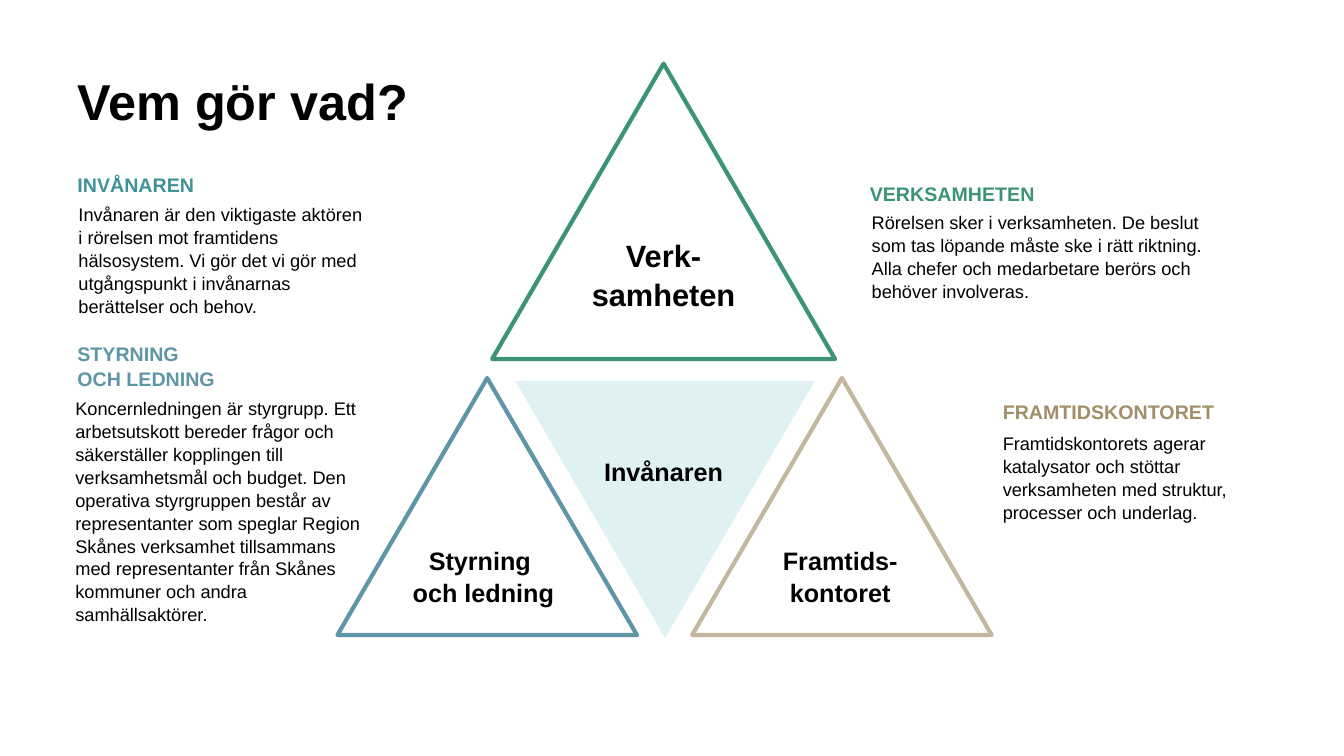
from pptx import Presentation
from pptx.dml.color import RGBColor
from pptx.enum.shapes import MSO_SHAPE
from pptx.enum.text import MSO_ANCHOR, PP_ALIGN
from pptx.util import Pt

COLORS = {
    "text": "000000",
    "residents": "3F9397",
    "residents_fill": "DFF1F2",
    "operations": "3D9378",
    "steering": "5E96A8",
    "office": "A28E68",
    "office_line": "C4B79F",
}


def write_text(frame, text, size=13, color="text", bold=False,
               align=PP_ALIGN.LEFT, spacing=1.05):
    frame.word_wrap = True
    frame.text = text
    for paragraph in frame.paragraphs:
        paragraph.alignment = align
        paragraph.line_spacing = spacing
        paragraph.font.name = "Arial"
        paragraph.font.size = Pt(size)
        paragraph.font.bold = bold
        paragraph.font.color.rgb = RGBColor.from_string(COLORS[color])


class TriangleSlide:
    def __init__(self, deck):
        self.slide = deck.slides.add_slide(deck.slide_layouts[5])

    def title(self, text, left, top, width, height):
        heading = self.slide.shapes.title
        heading.left, heading.top = Pt(left), Pt(top)
        heading.width, heading.height = Pt(width), Pt(height)
        heading.text_frame.vertical_anchor = MSO_ANCHOR.MIDDLE
        write_text(heading.text_frame, text, size=36, bold=True, spacing=1)

    def triangle(self, left, top, width, height, line=None, fill=None, rotation=0):
        triangle = self.slide.shapes.add_shape(
            MSO_SHAPE.ISOSCELES_TRIANGLE, Pt(left), Pt(top), Pt(width), Pt(height))
        triangle.shadow.inherit = False
        triangle.rotation = rotation
        if fill:
            triangle.fill.solid()
            triangle.fill.fore_color.rgb = RGBColor.from_string(COLORS[fill])
        else:
            triangle.fill.background()
        if line:
            triangle.line.color.rgb = RGBColor.from_string(COLORS[line])
            triangle.line.width = Pt(3)
        else:
            triangle.line.fill.background()

    def text(self, text, left, top, width, height, **style):
        box = self.slide.shapes.add_textbox(Pt(left), Pt(top), Pt(width), Pt(height))
        write_text(box.text_frame, text, **style)

    def label(self, text, left, top, height, size=18):
        self.text(text, left, top, 152, height, size=size, bold=True,
                  align=PP_ALIGN.CENTER)

    def heading(self, text, left, top, color, height=24.5):
        self.text(text, left, top, 198, height, size=14, color=color, bold=True)


def main():
    deck = Presentation()
    deck.slide_width, deck.slide_height = Pt(960), Pt(540)
    slide = TriangleSlide(deck)

    slide.triangle(368, 272, 214, 183.6, fill="residents_fill", rotation=180)
    slide.title("Vem gör vad?", 48.2, 19.4, 828, 104.4)
    slide.triangle(351.5, 45.5, 245, 211, line="operations")
    for left, line in ((241, "steering"), (494.4, "office_line")):
        slide.triangle(left, 270, 214, 183.6, line=line)

    slide.label("Verk-\vsamheten", 398, 164.2, 60.5, size=22)
    slide.label("Styrning \noch ledning", 269.3, 385.2, 51)
    slide.label("Framtids-\nkontoret", 524.2, 385.2, 51)
    slide.label("Invånaren", 398, 321.1, 29)

    slide.heading("INVÅNAREN", 48.2, 119.5, "residents")
    slide.text("Invånaren är den viktigaste aktören i rörelsen mot framtidens "
               "hälsosystem. Vi gör det vi gör med utgångspunkt i invånarnas "
               "berättelser och behov.", 49, 141.1, 220.3, 85.7)

    slide.heading("STYRNING \vOCH LEDNING", 48.2, 239.8, "steering", height=41)
    slide.text("Koncernledningen är styrgrupp. Ett arbetsutskott bereder frågor "
               "och säkerställer kopplingen till verksamhetsmål och budget. Den "
               "operativa styrgruppen består av representanter som speglar Region "
               "Skånes verksamhet tillsammans med representanter från Skånes "
               "kommuner och andra samhällsaktörer.", 46.8, 279.4, 221, 164.9)

    slide.heading("VERKSAMHETEN", 614.2, 125.3, "operations")
    slide.text("Rörelsen sker i verksamheten. De beslut som tas löpande måste ske "
               "i rätt riktning. Alla chefer och medarbetare berörs och behöver "
               "involveras.", 615.6, 146.9, 269.3, 85.7)

    slide.heading("FRAMTIDSKONTORET", 709.2, 281.5, "office")
    slide.text("Framtidskontorets agerar katalysator och stöttar verksamheten med "
               "struktur, processer och underlag.", 709.2, 304.6, 175.7, 85.7)

    deck.save("out.pptx")


if __name__ == "__main__":
    main()
